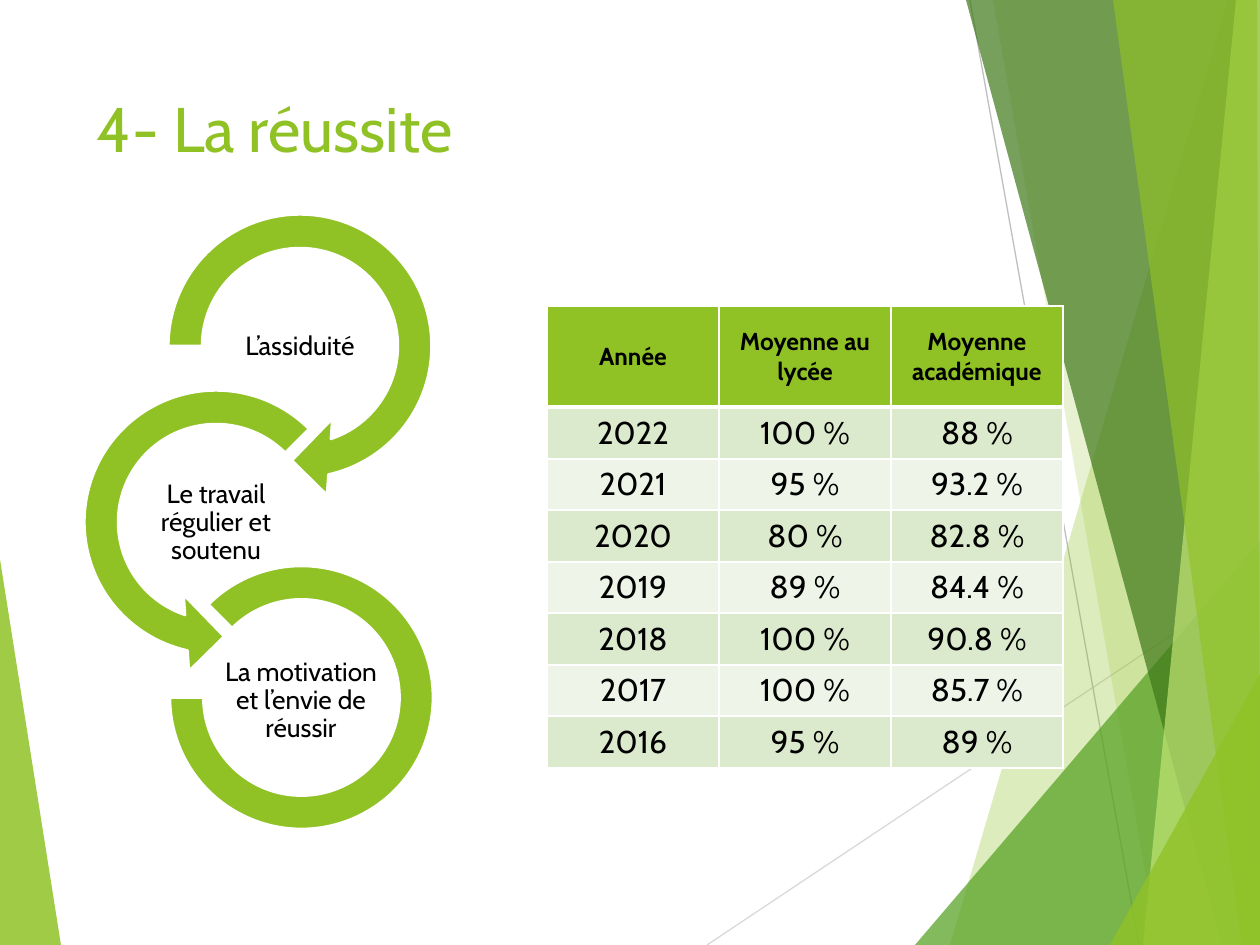
import lxml.etree
import pptx
import pptx.dml.color
import pptx.enum.shapes
import pptx.enum.text
import pptx.oxml.ns
import pptx.util
from dataclasses import dataclass

EMU_PER_PX = 914400 / 126
SHAPE = pptx.enum.shapes.MSO_SHAPE
ALIGN = pptx.enum.text.PP_ALIGN
ANCHOR = pptx.enum.text.MSO_ANCHOR
RGB = pptx.dml.color.RGBColor.from_string
qn = pptx.oxml.ns.qn


@dataclass
class Theme:
    font: str = "Cabin"
    accent: str = "90C226"
    green: str = "54A021"
    dark_green: str = "3F7819"
    light_green: str = "C0E474"
    band_dark: str = "DBE9CD"
    band_light: str = "EEF4E8"
    white: str = "FFFFFF"
    text: str = "000000"
    title_size: int = 36
    body_size: int = 18
    circle_size: int = 15
    header_size: int = 14


theme = Theme()


def px(*lengths):
    """Turn pixel lengths into a list of EMU lengths."""
    return [pptx.util.Emu(round(length * EMU_PER_PX)) for length in lengths]


def write_text(frame, text, size, color=theme.text, bold=False, align=ALIGN.CENTER,
               anchor=ANCHOR.MIDDLE, margins=(10, 6), line_spacing=None):
    frame.word_wrap = True
    frame.vertical_anchor = anchor
    frame.margin_left, frame.margin_top = frame.margin_right, frame.margin_bottom = px(*margins)
    paragraph = frame.paragraphs[0]
    paragraph.alignment = align
    if line_spacing:
        paragraph.line_spacing = line_spacing
    run = paragraph.add_run()
    run.text = text
    run.font.name = theme.font
    run.font.size = pptx.util.Pt(size)
    run.font.bold = bold
    run.font.color.rgb = RGB(color)


presentation = pptx.Presentation()
presentation.slide_width, presentation.slide_height = px(1260, 945)
slide = presentation.slides.add_slide(presentation.slide_layouts[6])
shapes = slide.shapes

# Background lines, then translucent facets (colour, opacity in percent, corners)
for start, end, color in [((707, 945), (1260, 576), "D9D9D9"), ((970, 0), (1139, 945), "BFBFBF")]:
    connector = shapes.add_connector(
        pptx.enum.shapes.MSO_CONNECTOR.STRAIGHT, *px(*start, *end))
    connector.line.color.rgb = RGB(color)
    connector.line.width = pptx.util.Pt(0.75)
    lxml.etree.SubElement(connector._element.spPr, qn("a:effectLst"))

facets = [
    (theme.accent, 85, [(0, 559), (61, 945), (0, 945)]),
    (theme.accent, 30, [(1228, 0), (950, 945), (1260, 945), (1260, 0)]),
    (theme.accent, 20, [(993, 0), (1158, 945), (1260, 945), (1260, 0)]),
    (theme.green, 72, [(915, 945), (1260, 541), (1260, 945)]),
    (theme.dark_green, 70, [(966, 0), (1222, 945), (1260, 945), (1260, 0)]),
    (theme.light_green, 70, [(1236, 0), (1143, 945), (1260, 945), (1260, 0)]),
    (theme.accent, 65, [(1113, 0), (1242, 945), (1260, 945), (1257, 0)]),
    (theme.accent, 80, [(1110, 945), (1260, 674), (1260, 945)]),
]
for color, opacity, corners in facets:
    builder = shapes.build_freeform(*corners[0], scale=EMU_PER_PX)
    builder.add_line_segments(corners[1:], close=True)
    facet = builder.convert_to_shape()
    facet.shadow.inherit = False
    facet.line.fill.background()
    facet.fill.solid()
    facet.fill.fore_color.rgb = RGB(color)
    color_element = facet._element.spPr.find(".//" + qn("a:srgbClr"))
    lxml.etree.SubElement(color_element, qn("a:alpha"), val=str(opacity * 1000))

title = shapes.add_textbox(*px(84, 84, 874, 181))
write_text(title.text_frame, "4- La réussite", theme.title_size, color=theme.accent,
           align=ALIGN.LEFT, anchor=ANCHOR.TOP, margins=(13, 6))

# Success rates
rows = [
    ("Année", "Moyenne au lycée", "Moyenne académique"),
    ("2022", "100 %", "88 %"),
    ("2021", "95 %", "93.2 %"),
    ("2020", "80 %", "82.8 %"),
    ("2019", "89 %", "84.4 %"),
    ("2018", "100 %", "90.8 %"),
    ("2017", "100 %", "85.7 %"),
    ("2016", "95 %", "89 %"),
]
table = shapes.add_table(len(rows), 3, *px(547, 306, 516, 462)).table
for column in table.columns:
    column.width = px(172)[0]
for row_index, values in enumerate(rows):
    is_header = row_index == 0
    band = theme.band_dark if row_index % 2 else theme.band_light
    table.rows[row_index].height = px(101 if is_header else 51 + row_index % 2)[0]
    for column_index, value in enumerate(values):
        cell = table.cell(row_index, column_index)
        write_text(cell.text_frame, value, bold=is_header,
                   size=theme.header_size if is_header else theme.body_size)
        cell.vertical_anchor = ANCHOR.MIDDLE
        cell.margin_left, cell.margin_top = cell.margin_right, cell.margin_bottom = px(10, 6)
        properties = cell._tc.get_or_add_tcPr()
        for side in ("lnL", "lnR", "lnT", "lnB"):
            thick = (is_header and side == "lnB") or (row_index == 1 and side == "lnT")
            border = lxml.etree.SubElement(
                properties, qn("a:" + side), w=str(pptx.util.Pt(3 if thick else 1)))
            border_fill = lxml.etree.SubElement(border, qn("a:solidFill"))
            lxml.etree.SubElement(border_fill, qn("a:srgbClr"), val=theme.white)
        cell.fill.solid()
        cell.fill.fore_color.rgb = RGB(theme.accent if is_header else band)

# Chain of factors: ring preset, ring box, adjustments, label position, label
factors = [
    (SHAPE.CIRCULAR_ARROW, (147, 193, 306, 306), (0.11, 11.42, 45, 108, 0.125),
     (215, 304), "L’assiduité"),
    (SHAPE.LEFT_CIRCULAR_ARROW, (63, 369, 306, 306), (0.11, 11.42, 63, 189, 0.125),
     (131, 480), "Le travail régulier et soutenu"),
    (SHAPE.BLOCK_ARC, (170, 566, 263, 263), (135, 108, 0.127),
     (216, 658), "La motivation et l’envie de réussir"),
]
for preset, box, adjustments, label_position, label in factors:
    ring = shapes.add_shape(preset, *px(*box))
    for index, adjustment in enumerate(adjustments):
        ring.adjustments[index] = adjustment
    ring.shadow.inherit = False
    ring.fill.solid()
    ring.fill.fore_color.rgb = RGB(theme.accent)
    ring.line.color.rgb = RGB(theme.white)
    ring.line.width = pptx.util.Pt(1.5)
    label_box = shapes.add_textbox(*px(*label_position, 170, 86))
    write_text(label_box.text_frame, label, theme.circle_size, margins=(1, 1), line_spacing=0.9)

presentation.save("out.pptx")
